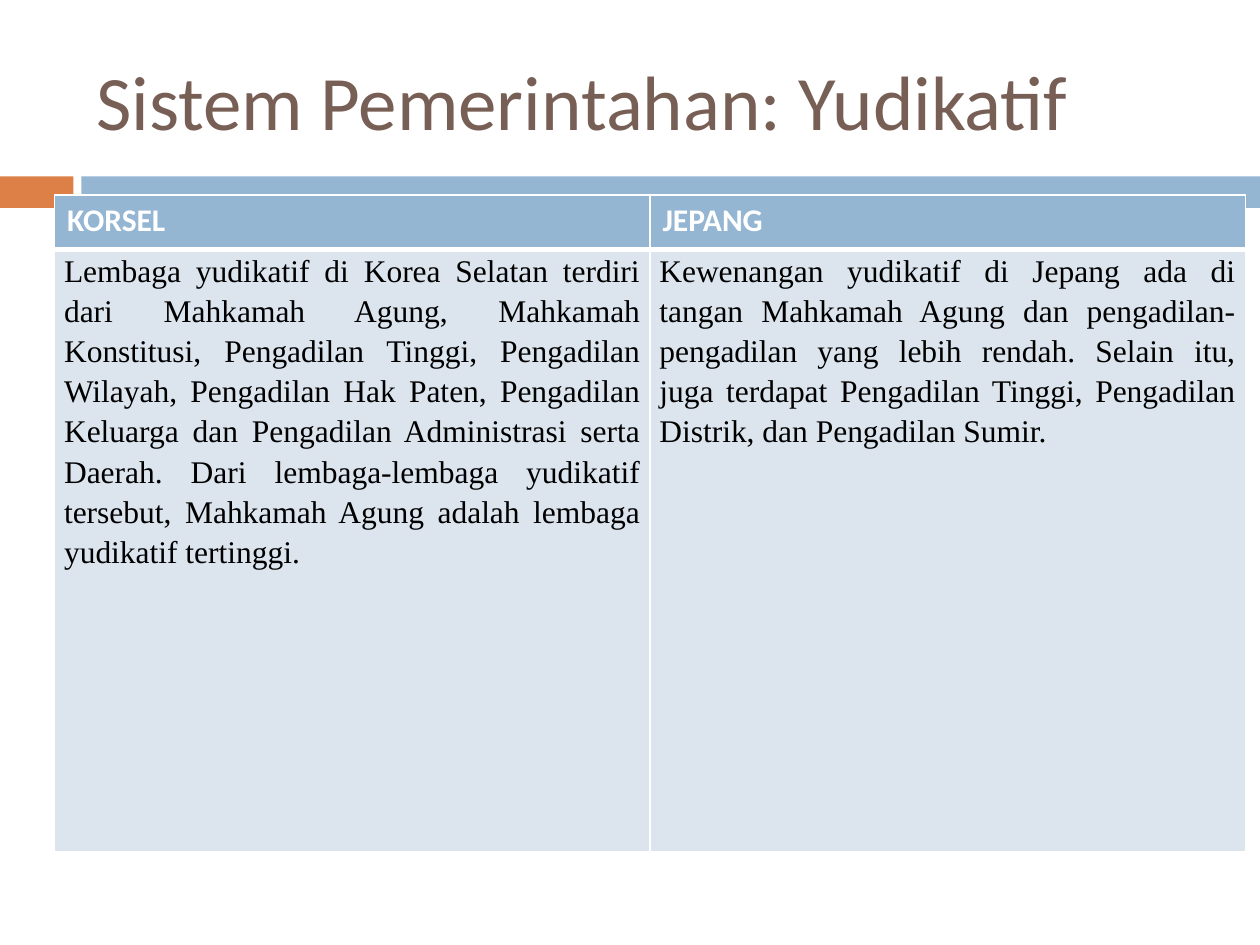
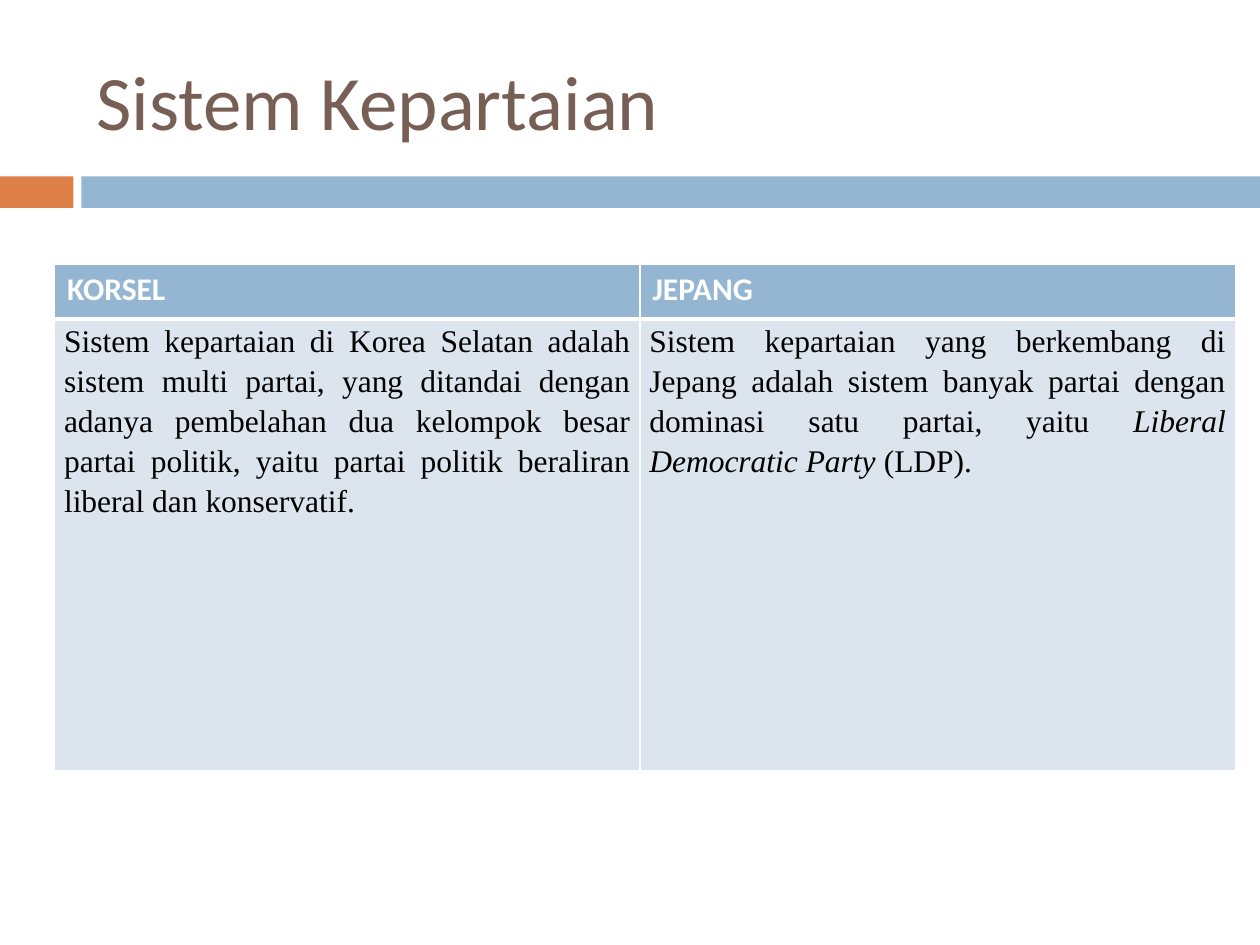
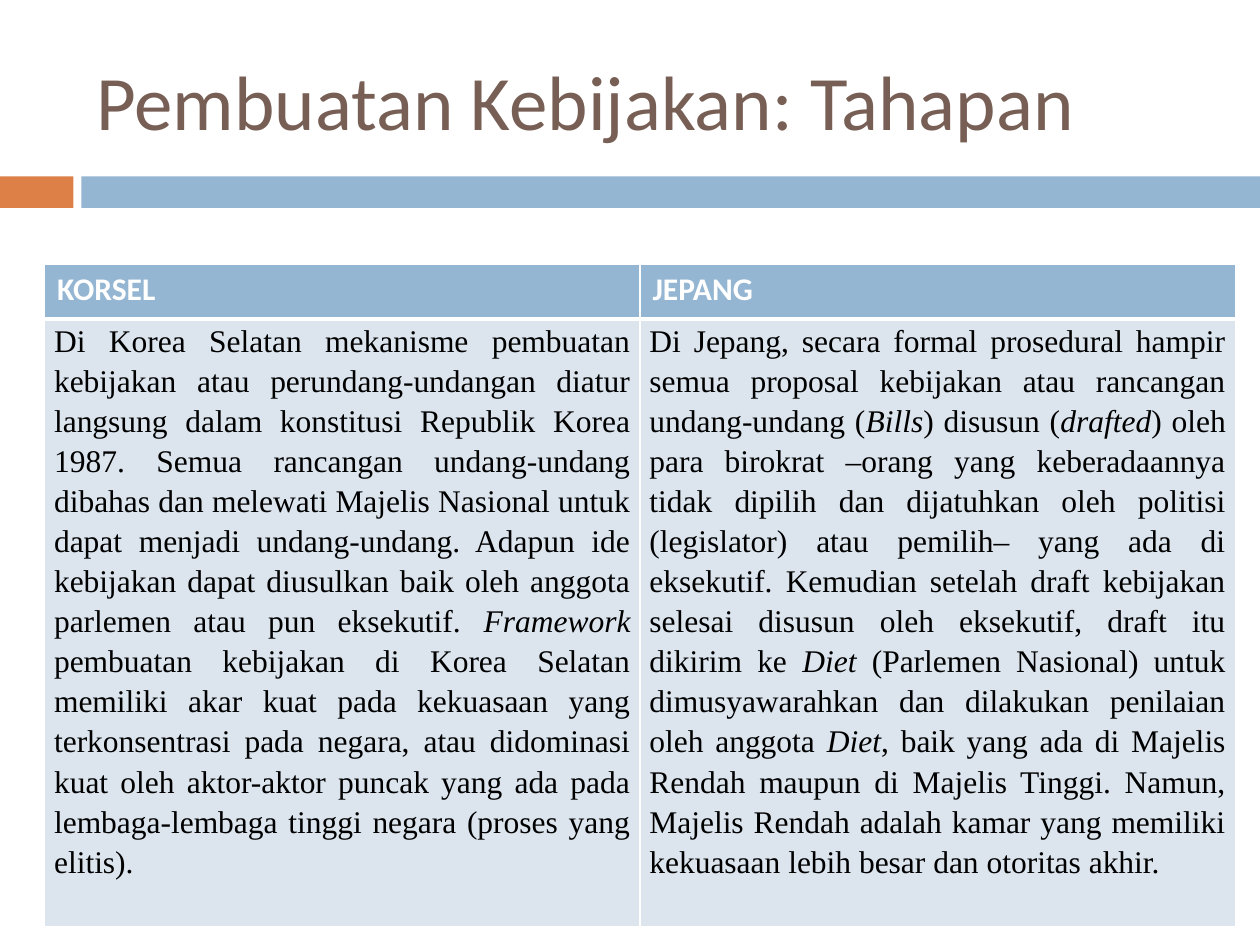
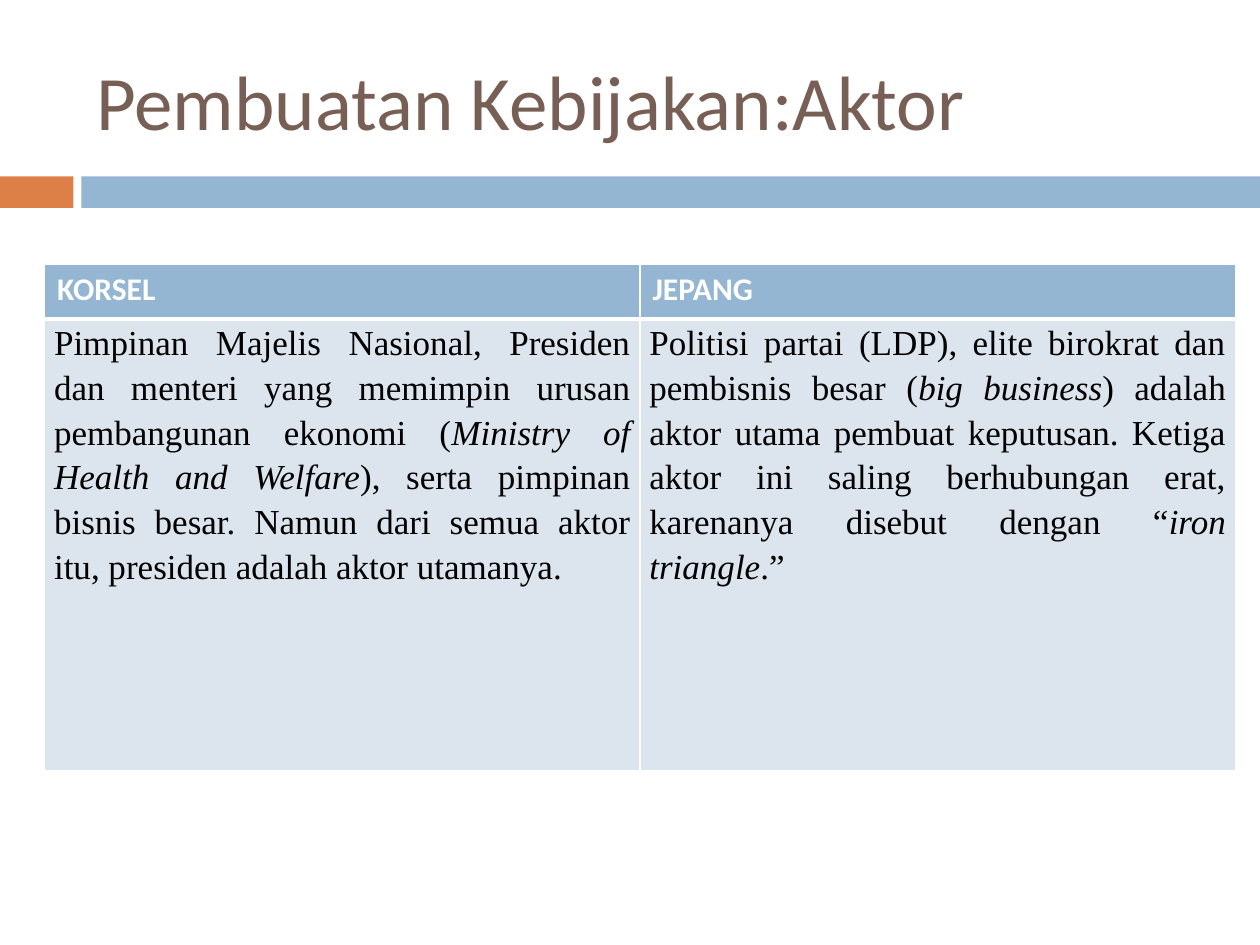
from dataclasses import dataclass

import lxml.etree
import pptx
import pptx.dml.color
import pptx.enum.shapes
import pptx.enum.text
import pptx.oxml.ns
import pptx.util

Pt = pptx.util.Pt

COLORS = {
    "title": "775F55",
    "accent": "DD8047",
    "band": "94B6D2",
    "body": "DCE5EE",
    "white": "FFFFFF",
    "black": "000000",
}
HEADING_FONT = "Calibri"
BODY_FONT = "Times New Roman"
HEADINGS = ("KORSEL", "JEPANG")
HEADER_HEIGHT = 31
COLUMN_WIDTH = 340.2
THIN, THICK = 1, 3


@dataclass(frozen=True)
class Band:
    left: float
    width: float
    color: str


@dataclass(frozen=True)
class Comparison:
    """One slide: a title and a table; asterisks enclose italic words."""
    title: str
    korea: str
    japan: str
    left: float = 25.5
    top: float = 151.2
    first_width: float = COLUMN_WIDTH
    body_height: float = 258.5
    size: float = 18


BANDS = (Band(0, 42, "accent"), Band(46.5, 673.5, "band"))

COMPARISONS = (
    Comparison(
        "Sistem Pemerintahan: Yudikatif",
        "Lembaga yudikatif di Korea Selatan terdiri dari Mahkamah Agung, "
        "Mahkamah Konstitusi, Pengadilan Tinggi, Pengadilan Wilayah, "
        "Pengadilan Hak Paten, Pengadilan Keluarga dan Pengadilan "
        "Administrasi serta Daerah. Dari lembaga-lembaga yudikatif "
        "tersebut, Mahkamah Agung adalah lembaga yudikatif tertinggi.",
        "Kewenangan yudikatif di Jepang ada di tangan Mahkamah Agung dan "
        "pengadilan-pengadilan yang lebih rendah. Selain itu, juga terdapat "
        "Pengadilan Tinggi, Pengadilan Distrik, dan Pengadilan Sumir.",
        left=31.2, top=111.5, body_height=344.5,
    ),
    Comparison(
        "Sistem Kepartaian",
        "Sistem kepartaian di Korea Selatan adalah sistem multi partai, yang "
        "ditandai dengan adanya pembelahan dua kelompok besar partai "
        "politik, yaitu partai politik beraliran liberal dan konservatif.",
        "Sistem kepartaian yang berkembang di Jepang adalah sistem banyak "
        "partai dengan dominasi satu partai, yaitu *Liberal Democratic "
        "Party* (LDP).",
        left=31.2, first_width=334.5,
    ),
    Comparison(
        "Pembuatan Kebijakan: Tahapan",
        "Di Korea Selatan mekanisme pembuatan kebijakan atau "
        "perundang-undangan diatur langsung dalam konstitusi Republik Korea "
        "1987. Semua rancangan undang-undang dibahas dan melewati Majelis "
        "Nasional untuk dapat menjadi undang-undang. Adapun ide kebijakan "
        "dapat diusulkan baik oleh anggota parlemen atau pun eksekutif. "
        "*Framework *pembuatan kebijakan di Korea Selatan memiliki akar kuat "
        "pada kekuasaan yang terkonsentrasi pada negara, atau didominasi "
        "kuat oleh aktor-aktor puncak yang ada pada lembaga-lembaga tinggi "
        "negara (proses yang elitis).",
        "Di Jepang, secara formal prosedural hampir semua proposal kebijakan "
        "atau rancangan undang-undang (*Bills*) disusun (*drafted*) oleh "
        "para birokrat –orang yang keberadaannya tidak dipilih dan "
        "dijatuhkan oleh politisi (legislator) atau pemilih– yang ada di "
        "eksekutif. Kemudian setelah draft kebijakan selesai disusun oleh "
        "eksekutif, draft itu dikirim ke *Diet* (Parlemen Nasional) untuk "
        "dimusyawarahkan dan dilakukan penilaian oleh anggota *Diet*, baik "
        "yang ada di Majelis Rendah maupun di Majelis Tinggi. Namun, Majelis "
        "Rendah adalah kamar yang memiliki kekuasaan lebih besar dan "
        "otoritas akhir.",
    ),
    Comparison(
        "Pembuatan Kebijakan:Aktor",
        "Pimpinan Majelis Nasional, Presiden dan menteri yang memimpin "
        "urusan pembangunan ekonomi (*Ministry of Health and Welfare*), "
        "serta pimpinan bisnis besar. Namun dari semua aktor itu, presiden "
        "adalah aktor utamanya.",
        "Politisi partai (LDP), elite birokrat dan pembisnis besar (*big "
        "business*) adalah aktor utama pembuat keputusan. Ketiga aktor ini "
        "saling berhubungan erat, karenanya disebut dengan “*iron "
        "triangle*.”",
        size=20,
    ),
)


def rgb(name: str) -> pptx.dml.color.RGBColor:
    return pptx.dml.color.RGBColor.from_string(COLORS[name])


def style(span, font: str, size: float, color: str,
          bold: bool = False, italic: bool = False) -> None:
    span.font.name = font
    span.font.size = Pt(size)
    span.font.color.rgb = rgb(color)
    span.font.bold = bold
    span.font.italic = italic


def draw_band(page, band: Band) -> None:
    shape = page.shapes.add_shape(
        pptx.enum.shapes.MSO_SHAPE.RECTANGLE,
        Pt(band.left), Pt(100.8), Pt(band.width), Pt(18))
    shape.shadow.inherit = False
    shape.fill.solid()
    shape.fill.fore_color.rgb = rgb(band.color)
    shape.line.fill.background()


def draw_title(page, title: str) -> None:
    box = page.shapes.add_textbox(Pt(48), Pt(18), Pt(642), Pt(78))
    frame = box.text_frame
    frame.word_wrap = True
    frame.vertical_anchor = pptx.enum.text.MSO_ANCHOR.MIDDLE
    frame.text = title
    style(frame.paragraphs[0].runs[0], HEADING_FONT, 44, "title")


def paint_cell(cell, fill: str, top: float, bottom: float) -> None:
    # Borders must come before the fill in the cell properties
    properties = cell._tc.get_or_add_tcPr()
    name = pptx.oxml.ns.qn
    for side, width in (("L", THIN), ("R", THIN), ("T", top), ("B", bottom)):
        line = lxml.etree.SubElement(
            properties, name(f"a:ln{side}"), w=str(Pt(width)))
        solid = lxml.etree.SubElement(line, name("a:solidFill"))
        lxml.etree.SubElement(solid, name("a:srgbClr"), val=COLORS["white"])
    cell.fill.solid()
    cell.fill.fore_color.rgb = rgb(fill)


def fill_header(cell, heading: str) -> None:
    paint_cell(cell, "band", THIN, THICK)
    cell.text_frame.text = heading
    style(cell.text_frame.paragraphs[0].runs[0],
          HEADING_FONT, 18, "white", bold=True)


def fill_body(cell, text: str, size: float) -> None:
    paint_cell(cell, "body", THICK, THIN)
    cell.margin_left = cell.margin_right = Pt(5.4)
    cell.margin_top = cell.margin_bottom = Pt(0)
    para = cell.text_frame.paragraphs[0]
    para.alignment = pptx.enum.text.PP_ALIGN.JUSTIFY
    para.line_spacing = 1.15
    for index, part in enumerate(text.split("*")):
        span = para.add_run()
        span.text = part
        style(span, BODY_FONT, size, "black", italic=index % 2 == 1)


def draw_table(page, item: Comparison) -> None:
    widths = (item.first_width, COLUMN_WIDTH)
    heights = (HEADER_HEIGHT, item.body_height)
    table = page.shapes.add_table(
        2, 2, Pt(item.left), Pt(item.top),
        Pt(sum(widths)), Pt(sum(heights))).table
    for row, height in zip(table.rows, heights):
        row.height = Pt(height)
    bodies = (item.korea, item.japan)
    for index, (width, heading, body) in enumerate(
            zip(widths, HEADINGS, bodies)):
        table.columns[index].width = Pt(width)
        fill_header(table.cell(0, index), heading)
        fill_body(table.cell(1, index), body, item.size)


def main() -> None:
    deck = pptx.Presentation()
    deck.slide_width, deck.slide_height = Pt(720), Pt(540)
    for item in COMPARISONS:
        page = deck.slides.add_slide(deck.slide_layouts[6])
        for band in BANDS:
            draw_band(page, band)
        draw_title(page, item.title)
        draw_table(page, item)
    deck.save("out.pptx")


if __name__ == "__main__":
    main()
